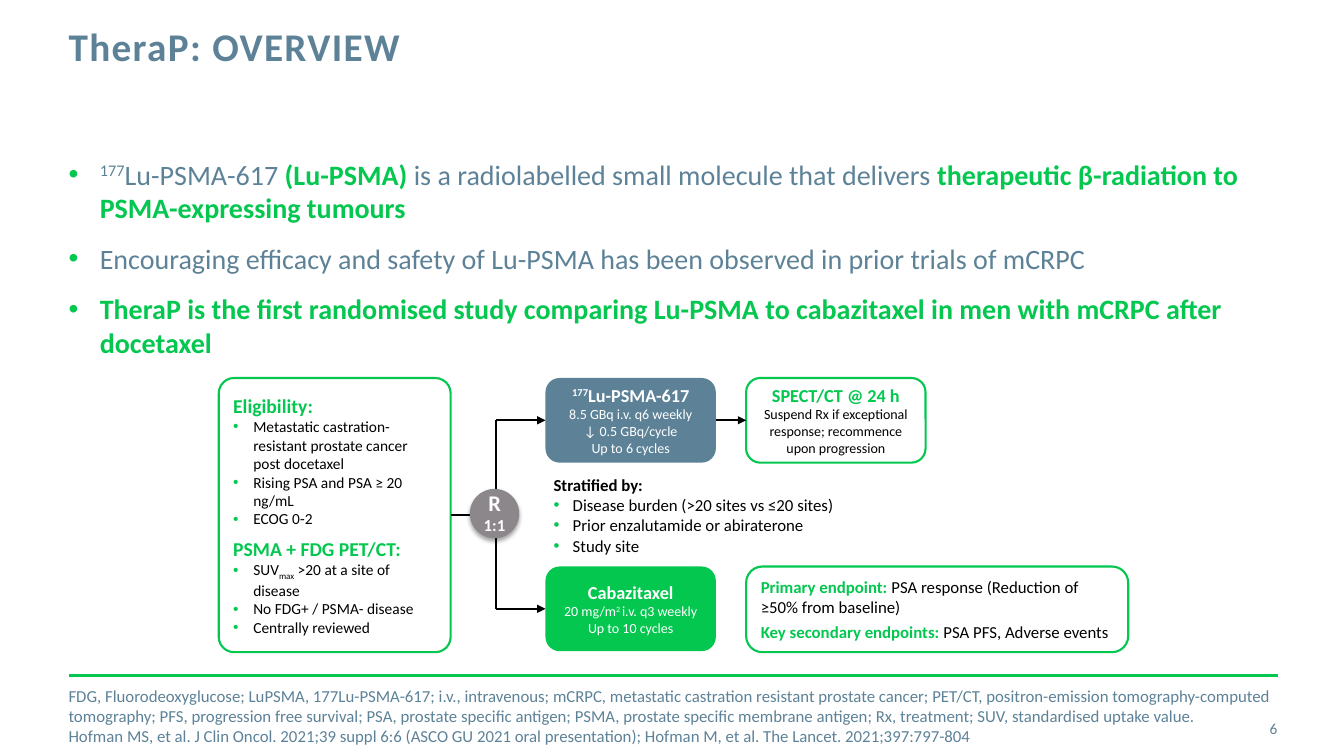
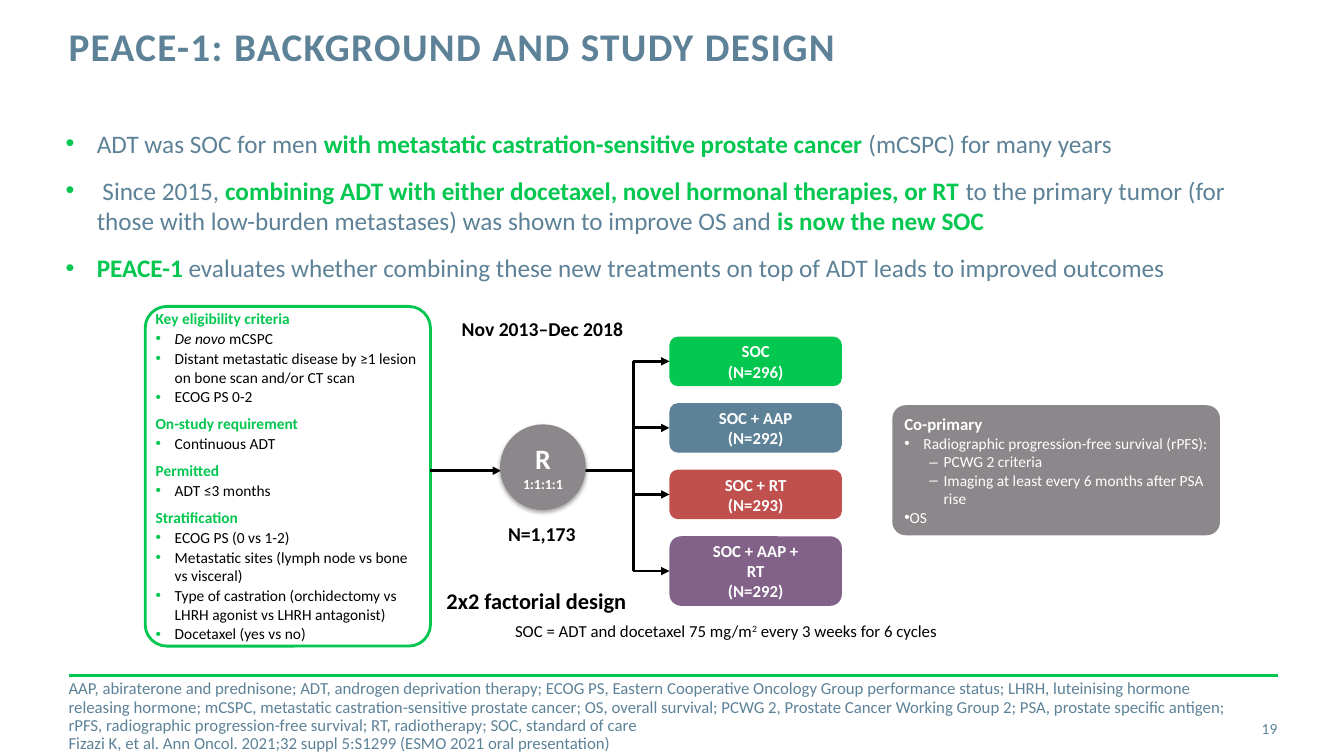
import copy
from dataclasses import dataclass
from functools import partial

from lxml import etree
from pptx import Presentation
from pptx.dml.color import RGBColor
from pptx.enum import shapes, text
from pptx.oxml import ns
from pptx.util import Inches, Pt

COLORS = {"slate": "5D8298", "green": "03C74F", "grey": "8B878B", "red": "C0504D",
          "purple": "826288", "black": "000000", "white": "FFFFFF"}
FONT = "Calibri"
TWO_BODIES = 3  # layout with a title and two body placeholders
CENTER, RIGHT = text.PP_ALIGN.CENTER, text.PP_ALIGN.RIGHT
MIDDLE, TOP = text.MSO_ANCHOR.MIDDLE, text.MSO_ANCHOR.TOP
LEFT_SIDE, RIGHT_SIDE = 1, 3


@dataclass
class Box:
    left: float
    top: float
    width: float
    height: float

    def inner(self, x, y, width, height):
        return Box(self.left + x, self.top + y, width, height)

    def point(self, x, y):
        return self.left + x, self.top + y

    def lengths(self):
        return [Inches(v) for v in (self.left, self.top, self.width, self.height)]


def rgb(name):
    return RGBColor.from_string(COLORS[name])


def sub(parent, tag, **attributes):
    return etree.SubElement(parent, ns.qn(tag), {k: str(v) for k, v in attributes.items()})


# Text: a run is a string or (string, style); a paragraph is (runs, style, layout)
def run(words, **style):
    return words, style


def para(*runs, mark=None, mark_color="green", indent=0, hang=0, before=0, align=None,
         spacing=None, level=0, **style):
    layout = dict(mark=mark, mark_color=mark_color, indent=indent, hang=hang, before=before,
                  align=align, spacing=spacing, level=level)
    return runs, style, layout


bullet = partial(para, mark="•", indent=0.19, hang=0.19)
strong = partial(run, color="green", bold=True)
sup = partial(run, base=30)


def add_run(paragraph, words, size, color, bold=False, italic=False, base=0, spc=0):
    for i, line_words in enumerate(words.split("\n")):
        if i:
            paragraph.add_line_break()
            paragraph._p[-1].append(copy.deepcopy(piece._r.rPr))
        if not line_words:
            continue
        piece = paragraph.add_run()
        piece.text = line_words
        font = piece.font
        font.name, font.size, font.bold, font.italic = FONT, Pt(size), bold, italic
        font.color.rgb = rgb(color)
        if base:
            piece._r.rPr.set("baseline", str(base * 1000))
        if spc:
            piece._r.rPr.set("spc", str(spc * 100))


def write(frame, paragraphs, insets=(0, 0, 0, 0), anchor=TOP, wrap=True, **defaults):
    frame.word_wrap, frame.vertical_anchor = wrap, anchor
    frame.auto_size = text.MSO_AUTO_SIZE.NONE
    (frame.margin_left, frame.margin_top,
     frame.margin_right, frame.margin_bottom) = [Inches(v) for v in insets]
    for i, (runs, style, layout) in enumerate(paragraphs):
        p = frame.add_paragraph() if i else frame.paragraphs[0]
        p.level, p.alignment = layout["level"], layout["align"]
        p.space_before, p.space_after = Pt(layout["before"]), Pt(0)
        if layout["spacing"]:
            p.line_spacing = layout["spacing"]
        props = p._p.get_or_add_pPr()
        props.set("marL", str(Inches(layout["indent"])))
        props.set("indent", str(-Inches(layout["hang"])))
        if layout["mark"]:
            sub(sub(props, "a:buClr"), "a:srgbClr", val=COLORS[layout["mark_color"]])
            sub(props, "a:buFont", typeface="Arial")
            sub(props, "a:buChar", char=layout["mark"])
        else:
            sub(props, "a:buNone")
        for item in runs:
            words, own = (item, {}) if isinstance(item, str) else item
            add_run(p, words, **{**defaults, **style, **own})


# Building blocks
def panel(slide, box, paragraphs, fill="white", line=None, radius=0.167, insets=(0, 0, 0, 0),
          **defaults):
    card = slide.shapes.add_shape(shapes.MSO_SHAPE.ROUNDED_RECTANGLE, *box.lengths())
    card.adjustments[0] = radius
    paint(card, fill, line)
    write(card.text_frame, paragraphs, insets, MIDDLE, **defaults)
    return card


def paint(shape, fill, line=None):
    shape.shadow.inherit = False
    shape.fill.solid()
    shape.fill.fore_color.rgb = rgb(fill)
    if line:
        shape.line.color.rgb, shape.line.width = rgb("green"), Pt(line)
    else:
        shape.line.fill.background()


def randomisation(slide, box, ratio, size, ratio_size, spacing=None):
    disc = slide.shapes.add_shape(shapes.MSO_SHAPE.OVAL, *box.lengths())
    paint(disc, "grey")
    effects = disc._element.spPr.find(ns.qn("a:effectLst"))
    shadow = sub(effects, "a:outerShdw", blurRad=Pt(3.1), dist=Pt(1.8), dir=5400000, rotWithShape=0)
    sub(sub(shadow, "a:srgbClr", val=COLORS["black"]), "a:alpha", val=35000)
    write(disc.text_frame,
          [para(run("R\n", size=size), run(ratio, size=ratio_size), align=CENTER, spacing=spacing)],
          anchor=MIDDLE, wrap=False, color="white", bold=True)


def label(slide, box, paragraphs, **options):
    note = slide.shapes.add_textbox(*box.lengths())
    write(note.text_frame, paragraphs, **options)


def line(slide, start, end, width, color="black", arrow=False, source=None, target=None):
    link = slide.shapes.add_connector(shapes.MSO_CONNECTOR.STRAIGHT,
                                      *[Inches(v) for v in (*start, *end)])
    if source is not None:
        link.begin_connect(source, RIGHT_SIDE)
    if target is not None:
        link.end_connect(target, LEFT_SIDE)
    link.line.color.rgb, link.line.width = rgb(color), Pt(width)
    props = link._element.spPr
    if arrow:
        sub(props.find(ns.qn("a:ln")), "a:tailEnd", type="triangle")
    sub(props, "a:effectLst")


# Frame shared by all slides
def study_slide(deck, title, number, points, points_box, points_size, notes, notes_box,
                notes_spacing=None):
    slide = deck.slides.add_slide(deck.slide_layouts[TWO_BODIES])
    heading, body, footnote = slide.placeholders
    line(slide, (0.68, 6.7), (12.68, 6.7), 2, "green")
    for holder, box in ((heading, Box(0.68, 0.27, 9.56, 0.88)),
                        (body, points_box), (footnote, notes_box)):
        holder.left, holder.top, holder.width, holder.height = box.lengths()
    left = text.PP_ALIGN.LEFT
    write(heading.text_frame, [para(title, spacing=Pt(30), align=left)],
          size=28, color="slate", bold=True, spc=1)
    write(body.text_frame,
          [bullet(*runs, indent=0.31, hang=0.31, before=12 if i else 0)
           for i, runs in enumerate(points)], size=points_size, color="slate")
    write(footnote.text_frame, [para(note, spacing=notes_spacing) for note in notes],
          anchor=MIDDLE, size=12, color="slate")
    label(slide, Box(11.81, 7.03, 0.86, 0.4), [para(number, align=RIGHT)],
          anchor=MIDDLE, size=11, color="slate")
    return slide


# TheraP: eligibility, two arms and endpoints
def therap_design(slide, area):
    arm_top, arm_bottom, arm_left, arm_height = 0, 1.87, 3.24, 0.84
    small = (0.04,) * 4
    wide = (0.1, 0.05, 0.1, 0.05)
    head = partial(para, size=14, color="green", bold=True)
    item = partial(bullet, indent=0.2, hang=0.2)
    eligibility = panel(slide, area.inner(0, 0, 2.3, 2.72), [
        head("Eligibility:"),
        item("Metastatic castration-resistant prostate cancer post docetaxel"),
        item("Rising PSA and PSA ≥ 20 ng/mL"),
        item("ECOG 0-2"),
        head("PSMA + FDG PET/CT:", before=6),
        item("SUV", run("max", base=-25), " >20 at a site of disease"),
        item("No FDG+ / PSMA- disease"),
        item("Centrally reviewed"),
    ], line=1.5, radius=0.066, insets=wide, size=11, color="black")

    arm_head = partial(para, align=CENTER, size=13, bold=True)
    arm_text = partial(para, align=CENTER)
    arm = partial(panel, slide, insets=small, size=10)
    lutetium = arm(area.inner(arm_left, arm_top, 1.69, arm_height), [
        arm_head(sup("177"), "Lu-PSMA-617"),
        arm_text("8.5 GBq i.v. q6 weekly\n↓ 0.5 GBq/cycle\nUp to 6 cycles"),
    ], fill="slate", color="white")
    cabazitaxel = arm(area.inner(arm_left, arm_bottom, 1.69, arm_height), [
        arm_head("Cabazitaxel"),
        arm_text("20 mg/m", sup("2 "), "i.v. q3 weekly\nUp to 10 cycles"),
    ], fill="green", color="white")
    imaging = arm(area.inner(5.23, arm_top, 1.78, arm_height), [
        arm_head("SPECT/CT @ 24 h", color="green"),
        arm_text("Suspend Rx if exceptional response; recommence upon progression"),
    ], line=1.5, color="black")
    panel(slide, area.inner(5.23, arm_bottom, 3.79, 0.85), [
        para(strong("Primary endpoint: "), "PSA response (Reduction of \n≥50% from baseline)"),
        para(strong("Key secondary endpoints: "), "PSA PFS, Adverse events", before=3),
    ], line=1.5, radius=0.189, insets=wide, size=12, color="black")
    label(slide, area.inner(3.32, 0.96, 2.81, 0.81), [
        para("Stratified by:", bold=True),
        bullet("Disease burden (>20 sites vs ≤20 sites)"),
        bullet("Prior enzalutamide or abiraterone"),
        bullet("Study site"),
    ], size=12, color="black")

    # Flow lines, with the randomisation disc on top
    trunk, middles = 2.75, [top + arm_height / 2 for top in (arm_top, arm_bottom)]
    line(slide, *[area.point(trunk, y) for y in middles], 1.5)
    for y, target in zip(middles, (lutetium, cabazitaxel)):
        line(slide, area.point(trunk, y), area.point(arm_left, y), 1.5, arrow=True, target=target)
    line(slide, area.point(4.93, middles[0]), area.point(5.23, middles[0]), 1.5, arrow=True,
         source=lutetium, target=imaging)
    line(slide, area.point(2.3, 1.36), area.point(2.49, 1.36), 1.5, source=eligibility)
    randomisation(slide, area.inner(2.49, 1.1, 0.49, 0.49), "1:1", 16, 12, 0.9)


# PEACE-1: criteria, four arms and co-primary endpoints
def peace_design(slide, area):
    criteria = {
        "Key eligibility criteria": [
            [run("De novo ", italic=True), "mCSPC"],
            ["Distant metastatic disease by ≥1 lesion on bone scan and/or CT scan"],
            ["ECOG PS 0-2"]],
        "On-study requirement": [["Continuous ADT"]],
        "Permitted": [["ADT ≤3 months"]],
        "Stratification": [
            ["ECOG PS (0 vs 1-2)"],
            ["Metastatic sites (lymph node vs bone vs visceral)"],
            ["Type of castration (orchidectomy vs LHRH agonist vs LHRH antagonist)"],
            ["Docetaxel (yes vs no)"]],
    }
    rows = []
    for group, items in criteria.items():
        rows.append(para(strong(group), before=6 if rows else 0))
        rows += [bullet(*runs, before=1) for runs in items]
    panel(slide, area.inner(0, 0, 2.83, 3.37), rows, line=2, radius=0.076,
          insets=(0.04, 0, 0, 0), size=11, color="black")

    # Arms hang from one trunk
    arms = [("SOC\n(N=296)", "green", 0.49), ("SOC + AAP\n(N=292)", "slate", 0.49),
            ("SOC + RT\n(N=293)", "red", 0.49), ("SOC + AAP +\nRT\n(N=292)", "purple", 0.69)]
    top, gap, arm_left, trunk, axis = 0.3, 0.17, 5.2, 4.84, 1.63
    middles = []
    for words, fill, height in arms:
        arm = panel(slide, area.inner(arm_left, top, 1.71, height), [para(words, align=CENTER)],
                    fill=fill, size=12, color="white", bold=True)
        middles.append(top + height / 2)
        line(slide, area.point(trunk, middles[-1]), area.point(arm_left, middles[-1]), 2,
             arrow=True, target=arm)
        top += height + gap
    line(slide, area.point(trunk, middles[0]), area.point(trunk, middles[-1]), 2)
    line(slide, area.point(2.83, axis), area.point(3.53, axis), 2, arrow=True)
    line(slide, area.point(4.29, axis), area.point(trunk, axis), 2)
    randomisation(slide, area.inner(3.52, 1.17, 0.85, 0.85), "1:1:1:1", 20, 10)

    item = partial(bullet, mark_color="white")
    detail = partial(item, mark="–", indent=0.39, hang=0.14, level=1)
    panel(slide, area.inner(7.41, 0.98, 3.25, 1.29), [
        para("Co-primary", size=12, bold=True),
        item("Radiographic progression-free survival (rPFS):"),
        detail("PCWG 2 criteria"),
        detail("Imaging at least every 6 months after PSA rise"),
        item("OS", indent=0, hang=0),
    ], fill="grey", radius=0.103, insets=(0.08, 0, 0, 0), size=11, color="white")

    # Labels around the flow
    for place, runs, size, bold in (
            ((3.04, 0.05, 1.82, 0.34), ["Nov 2013–Dec 2018"], 14, True),
            ((3.5, 2.09, 0.88, 0.34), ["N=1,173"], 14, True),
            ((2.89, 2.74, 2.06, 0.37), ["2x2 factorial design"], 16, True),
            ((3.57, 3.07, 4.45, 0.3), ["SOC = ADT and docetaxel 75 mg/m", sup("2"),
                                       " every 3 weeks for 6 cycles"], 12, False)):
        label(slide, area.inner(*place), [para(*runs)], insets=(0.1, 0.05, 0.1, 0.05),
              wrap=False, size=size, bold=bold, color="black")


def main():
    deck = Presentation()
    deck.slide_width, deck.slide_height = Inches(13.33), Inches(7.5)

    therap = study_slide(deck, "TheraP: OVERVIEW", "6", [
        [sup("177"), "Lu-PSMA-617 ", strong("(Lu-PSMA) "),
         "is a radiolabelled small molecule that delivers ",
         strong("therapeutic β-radiation to PSMA-expressing tumours")],
        ["Encouraging efficacy and safety of Lu-PSMA has been observed in prior trials of mCRPC"],
        [strong("TheraP is the first randomised study comparing Lu-PSMA to cabazitaxel in men with mCRPC after docetaxel")],
    ], Box(0.68, 1.56, 11.99, 2.1), 20, [
        "FDG, Fluorodeoxyglucose; LuPSMA, 177Lu-PSMA-617; i.v., intravenous; mCRPC, metastatic castration resistant prostate cancer; PET/CT, positron-emission tomography-computed tomography; PFS, progression free survival; PSA, prostate specific antigen; PSMA, prostate specific membrane antigen; Rx, treatment; SUV, standardised uptake value.",
        "Hofman MS, et al. J Clin Oncol. 2021;39 suppl 6:6 (ASCO GU 2021 oral presentation); Hofman M, et al. The Lancet. 2021;397:797-804",
    ], Box(0.68, 6.9, 11.99, 0.4))
    therap_design(therap, Box(2.17, 3.75, 9.02, 2.72))

    peace = study_slide(deck, "PEACE-1: BACKGROUND AND STUDY DESIGN", "19", [
        ["ADT was SOC for men ", strong("with metastatic castration-sensitive prostate cancer"),
         " (mCSPC) for many years"],
        [" Since 2015, ",
         strong("combining ADT with either docetaxel, novel hormonal therapies, or RT "),
         "to the primary tumor (for those with low-burden metastases) was shown to improve OS and ",
         strong("is now the new SOC")],
        [strong("PEACE-1 "),
         "evaluates whether combining these new treatments on top of ADT leads to improved outcomes"],
    ], Box(0.65, 1.27, 11.99, 1.7), 18, [
        "AAP, abiraterone and prednisone; ADT, androgen deprivation therapy; ECOG PS, Eastern Cooperative Oncology Group performance status; LHRH, luteinising hormone releasing hormone; mCSPC, metastatic castration-sensitive prostate cancer; OS, overall survival; PCWG 2, Prostate Cancer Working Group 2; PSA, prostate specific antigen; rPFS, radiographic progression-free survival; RT, radiotherapy; SOC, standard of care",
        "Fizazi K, et al. Ann Oncol. 2021;32 suppl 5:S1299 (ESMO 2021 oral presentation)",
    ], Box(0.68, 6.91, 11.66, 0.4), 0.9)
    peace_design(peace, Box(1.44, 3.04, 10.66, 3.37))

    deck.save("out.pptx")


if __name__ == "__main__":
    main()
